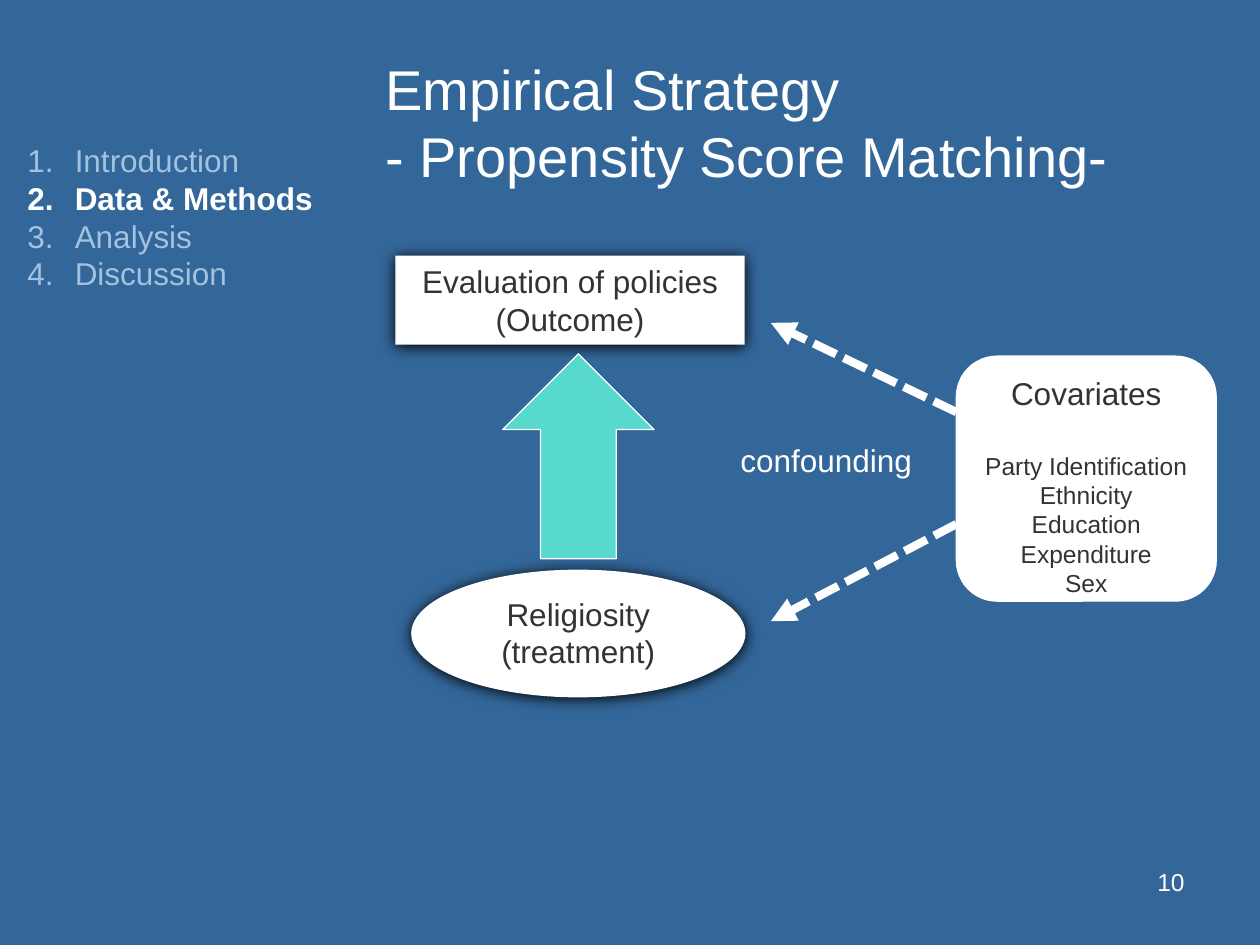
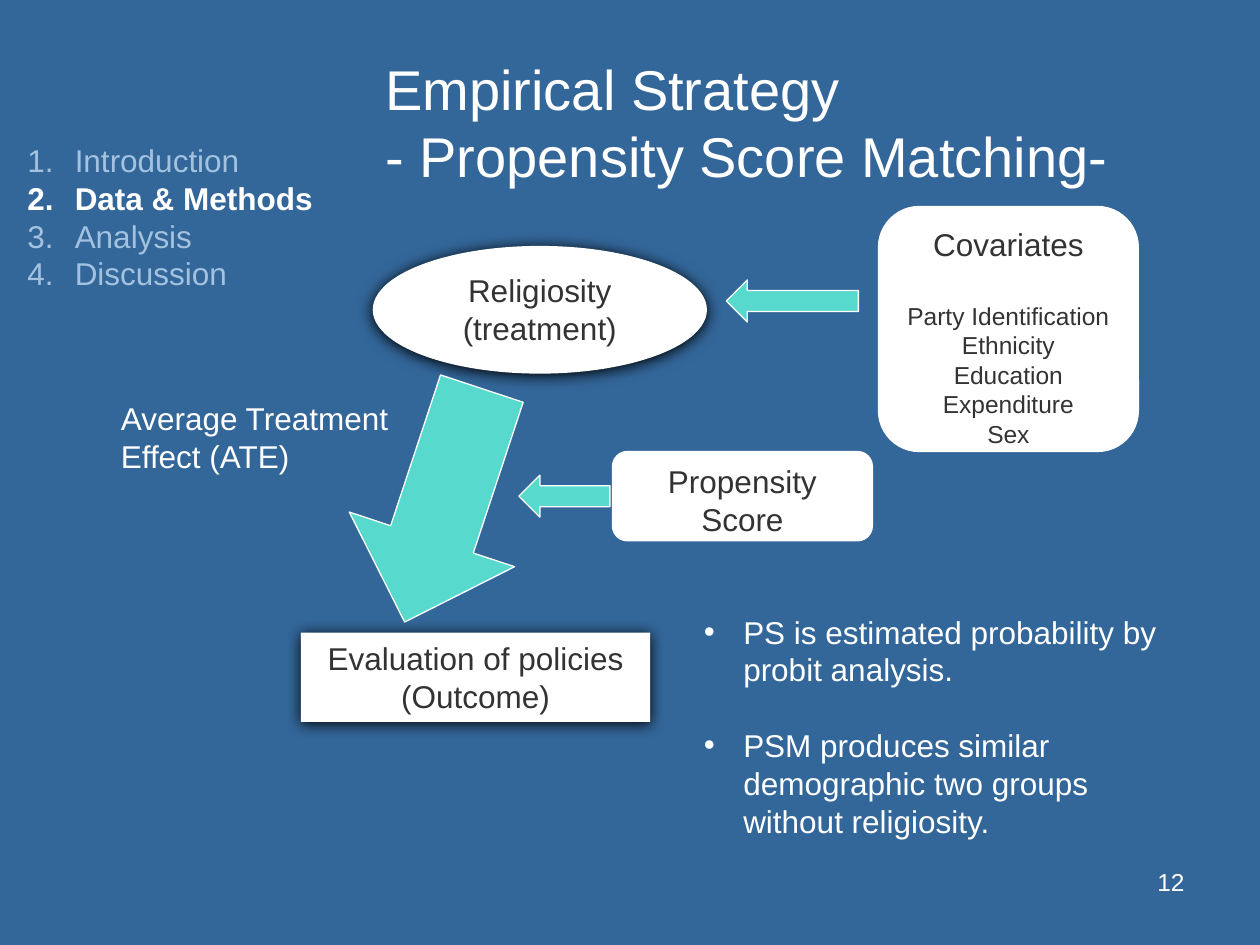
from lxml.etree import SubElement
from pptx import Presentation
from pptx.dml.color import RGBColor
from pptx.enum.dml import MSO_LINE
from pptx.enum.shapes import MSO_CONNECTOR, MSO_SHAPE
from pptx.enum.text import MSO_ANCHOR, MSO_AUTO_SIZE, PP_ALIGN
from pptx.oxml.ns import qn
from pptx.util import Pt

# Shared look
FONT = "Arial"
BLUE, WHITE, INK = "336699", "FFFFFF", "333333"
PALE, TEAL = "A3C2E0", "57D9CE"
LINE_HEIGHT = 1.2

# Shared content
TITLE = "Empirical Strategy\v- Propensity Score Matching-"
AGENDA = ["Introduction", "Data & Methods", "Analysis", "Discussion"]
CURRENT_SECTION = "Data & Methods"
COVARIATES = ["Party Identification", "Ethnicity", "Education", "Expenditure", "Sex"]
PSM_NOTES = [
    "PS is estimated probability by probit analysis.",
    "PSM produces similar demographic two groups without religiosity.",
]


def color(hex_code):
    return RGBColor.from_string(hex_code)


def points(*values):
    return [Pt(value) for value in values]


def add_text(frame, text, size=18, fill=WHITE, bold=False, align=PP_ALIGN.LEFT,
             before=0, bullet=None, indent=0):
    """Append one paragraph, using the empty first one when there is one."""
    first = frame.paragraphs[0]
    paragraph = frame.add_paragraph() if first.runs else first
    paragraph.text = text
    paragraph.alignment = align
    paragraph.space_before = Pt(before)
    paragraph.line_spacing = Pt(size * LINE_HEIGHT)
    if bullet:
        properties = paragraph._p.get_or_add_pPr()
        properties.set("marL", str(Pt(indent)))
        properties.set("indent", str(-Pt(indent)))
        if bullet == "number":
            SubElement(properties, qn("a:buAutoNum"), type="arabicPeriod")
        else:
            SubElement(properties, qn("a:buChar"), char=bullet)
    for run in paragraph.runs:
        font = run.font
        font.name, font.size, font.bold = FONT, Pt(size), bold
        font.color.rgb = color(fill)


def place(placeholder, box, anchor=MSO_ANCHOR.TOP):
    placeholder.left, placeholder.top, placeholder.width, placeholder.height = points(*box)
    frame = placeholder.text_frame
    frame.word_wrap = True
    frame.auto_size = MSO_AUTO_SIZE.NONE
    frame.vertical_anchor = anchor
    return frame


def add_label(slide, box, text, **text_format):
    frame = slide.shapes.add_textbox(*points(*box)).text_frame
    frame.word_wrap = True
    add_text(frame, text, **text_format)


def add_figure(slide, preset, box, fill=WHITE, outlined=True):
    figure = slide.shapes.add_shape(preset, *points(*box))
    figure.shadow.inherit = False
    figure.fill.solid()
    figure.fill.fore_color.rgb = color(fill)
    if outlined:
        figure.line.color.rgb = color(WHITE)
        figure.line.width = Pt(0.75)
    else:
        figure.line.fill.background()
    return figure


def add_node(slide, preset, box, lines, shadowed=False):
    """White box with centred dark text, either outlined or shadowed."""
    node = add_figure(slide, preset, box, outlined=not shadowed)
    if shadowed:
        effects = node._element.spPr.find(qn("a:effectLst"))
        shadow = SubElement(effects, qn("a:outerShdw"), blurRad=str(Pt(8.5)),
                            dist=str(Pt(1)), dir="5400000", rotWithShape="0")
        SubElement(shadow, qn("a:srgbClr"), val="000000")
    frame = node.text_frame
    frame.word_wrap = True
    frame.vertical_anchor = MSO_ANCHOR.TOP
    for line in lines:
        add_text(frame, line, fill=INK, align=PP_ALIGN.CENTER)
    return frame


def add_outcome(slide, left, top):
    add_node(slide, MSO_SHAPE.RECTANGLE, (left, top, 199.5, 51),
             ["Evaluation of policies", "(Outcome)"], shadowed=True)


def add_treatment(slide, left, top):
    add_node(slide, MSO_SHAPE.OVAL, (left, top, 191, 73),
             ["Religiosity", "(treatment)"], shadowed=True)


def add_covariates(slide, left, top):
    frame = add_node(slide, MSO_SHAPE.ROUNDED_RECTANGLE, (left, top, 148.5, 140),
                     ["Covariates"])
    for index, covariate in enumerate(COVARIATES):
        add_text(frame, covariate, size=14, fill=INK, align=PP_ALIGN.CENTER,
                 before=0 if index else 22)


def add_block_arrow(slide, box, rotation):
    add_figure(slide, MSO_SHAPE.RIGHT_ARROW, box, fill=TEAL).rotation = rotation


def add_dashed_arrow(slide, start, end):
    arrow = slide.shapes.add_connector(MSO_CONNECTOR.STRAIGHT, *points(*start, *end))
    arrow.line.color.rgb = color(WHITE)
    arrow.line.width = Pt(4.75)
    arrow.line.dash_style = MSO_LINE.SQUARE_DOT
    SubElement(arrow.line._get_or_add_ln(), qn("a:tailEnd"), type="triangle")
    SubElement(arrow._element.spPr, qn("a:effectLst"))


def start_slide(prs, layout_index, number):
    """Slide with the title, agenda and page number that all slides share."""
    slide = prs.slides.add_slide(prs.slide_layouts[layout_index])
    title = place(slide.shapes.title, (213, 21.5, 497.5, 90), MSO_ANCHOR.BOTTOM)
    add_text(title, TITLE, size=32)
    agenda = place(slide.placeholders[1], (8.5, 77, 181.5, 94.5))
    for section in AGENDA:
        current = section == CURRENT_SECTION
        add_text(agenda, section, fill=WHITE if current else PALE, bold=current,
                 bullet="number", indent=27)
    add_label(slide, (516, 492, 168, 37.5), str(number), size=14, align=PP_ALIGN.RIGHT)
    return slide


def build_confounding(prs):
    slide = start_slide(prs, 1, 10)
    # Effect of treatment on outcome
    add_outcome(slide, 226, 146)
    add_treatment(slide, 235, 325.5)
    add_block_arrow(slide, (272, 217.5, 117, 86.5), 270)
    # Covariates acting on both
    add_covariates(slide, 546.5, 203.5)
    add_dashed_arrow(slide, (546.5, 235.5), (440.5, 184.5))
    add_dashed_arrow(slide, (546.5, 299.5), (440.5, 355))
    add_label(slide, (416, 248.5, 127, 29), "confounding")


def build_matching(prs):
    slide = start_slide(prs, 3, 12)
    # Treatment, its effect and the outcome
    add_outcome(slide, 172, 361.5)
    add_treatment(slide, 213, 140.5)
    add_block_arrow(slide, (183, 239, 140.5, 99.5), 108.3)
    add_label(slide, (62, 224.5, 172, 51), "Average Treatment Effect (ATE)")
    # Covariates and propensity score
    add_node(slide, MSO_SHAPE.ROUNDED_RECTANGLE, (350, 258, 148.5, 51),
             ["Propensity Score"])
    add_covariates(slide, 502, 118)
    add_block_arrow(slide, (415, 160, 75.5, 24), 180)
    add_block_arrow(slide, (296.5, 271.5, 52, 24), 180)
    # Notes on the method
    notes = place(slide.placeholders[2], (395, 346.5, 294.5, 138))
    for index, note in enumerate(PSM_NOTES):
        add_text(notes, note, bullet="•", indent=22.5, before=21.6 if index else 0)


def main():
    prs = Presentation()
    prs.slide_width, prs.slide_height = points(720, 540)
    background = prs.slide_master.background.fill
    background.solid()
    background.fore_color.rgb = color(BLUE)
    build_confounding(prs)
    build_matching(prs)
    prs.save("out.pptx")


if __name__ == "__main__":
    main()
